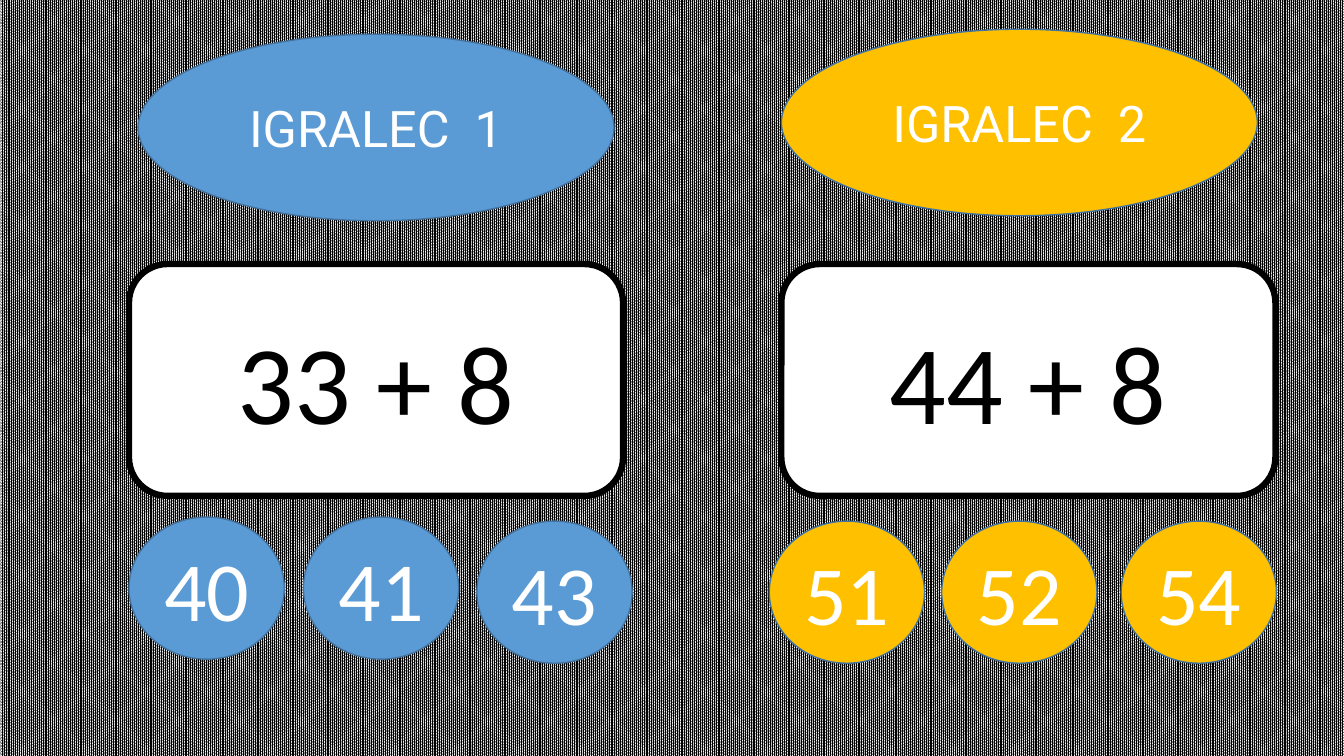
from pptx import Presentation
from pptx.dml.color import RGBColor
from pptx.enum.dml import MSO_PATTERN
from pptx.enum.shapes import MSO_SHAPE
from pptx.enum.text import MSO_ANCHOR, PP_ALIGN
from pptx.util import Inches, Pt

BLACK = RGBColor(0x00, 0x00, 0x00)
WHITE = RGBColor(0xFF, 0xFF, 0xFF)
BLUE = RGBColor(0x5B, 0x9B, 0xD5)
YELLOW = RGBColor(0xFF, 0xC0, 0x00)
OUTLINE = RGBColor(0x43, 0x73, 0x9E)

# name, colour, name position, sum, card left, answers as (number, left, top)
PLAYERS = [
    ("IGRALEC  1", BLUE, (1.37, 0.34), "33 + 8", 1.28,
     [("40", 1.28, 5.13), ("41", 3.01, 5.13), ("43", 4.73, 5.17)]),
    ("IGRALEC  2", YELLOW, (7.75, 0.29), "44 + 8", 7.75,
     [("51", 7.63, 5.17), ("52", 9.34, 5.17), ("54", 11.12, 5.17)]),
]


def write_text(shape, text, font="Calibri", size=60, color=WHITE):
    frame = shape.text_frame
    frame.word_wrap = True
    frame.vertical_anchor = MSO_ANCHOR.MIDDLE
    para = frame.paragraphs[0]
    para.alignment = PP_ALIGN.CENTER
    span = para.add_run()
    span.text = text
    span.font.name = font
    span.font.size = Pt(size)
    span.font.color.rgb = color


class GamePage:
    def __init__(self, page):
        self.page = page

    def background(self):
        fill = self.page.background.fill
        fill.patterned()
        fill.pattern = MSO_PATTERN.PERCENT_90
        fill.fore_color.rgb = BLACK
        fill.back_color.rgb = WHITE

    def outlined_shape(self, kind, place, fill, line, line_width):
        box = self.page.shapes.add_shape(kind, *[Inches(length) for length in place])
        box.shadow.inherit = False
        box.fill.solid()
        box.fill.fore_color.rgb = fill
        box.line.color.rgb = line
        box.line.width = Pt(line_width)
        return box

    def sum_card(self, text, left):
        card = self.outlined_shape(MSO_SHAPE.ROUNDED_RECTANGLE,
                                   (left, 2.62, 4.9, 2.3), WHITE, BLACK, 4.5)
        write_text(card, text, size=80, color=BLACK)

    def player_name(self, text, left, top, color):
        badge = self.outlined_shape(MSO_SHAPE.OVAL, (left, top, 4.72, 1.85),
                                    color, OUTLINE, 1)
        write_text(badge, text, font="Roboto", size=36)

    def answer(self, text, left, top, color):
        button = self.outlined_shape(MSO_SHAPE.OVAL, (left, top, 1.54, 1.41),
                                     color, OUTLINE, 1)
        write_text(button, text)


def main():
    deck = Presentation()
    deck.slide_width = Inches(13.33)
    deck.slide_height = Inches(7.5)
    game = GamePage(deck.slides.add_slide(deck.slide_layouts[6]))
    game.background()
    for name, color, name_place, task, card_left, answers in PLAYERS:
        game.sum_card(task, card_left)
        game.player_name(name, *name_place, color)
        for number, left, top in answers:
            game.answer(number, left, top, color)
    deck.save("out.pptx")


if __name__ == "__main__":
    main()
